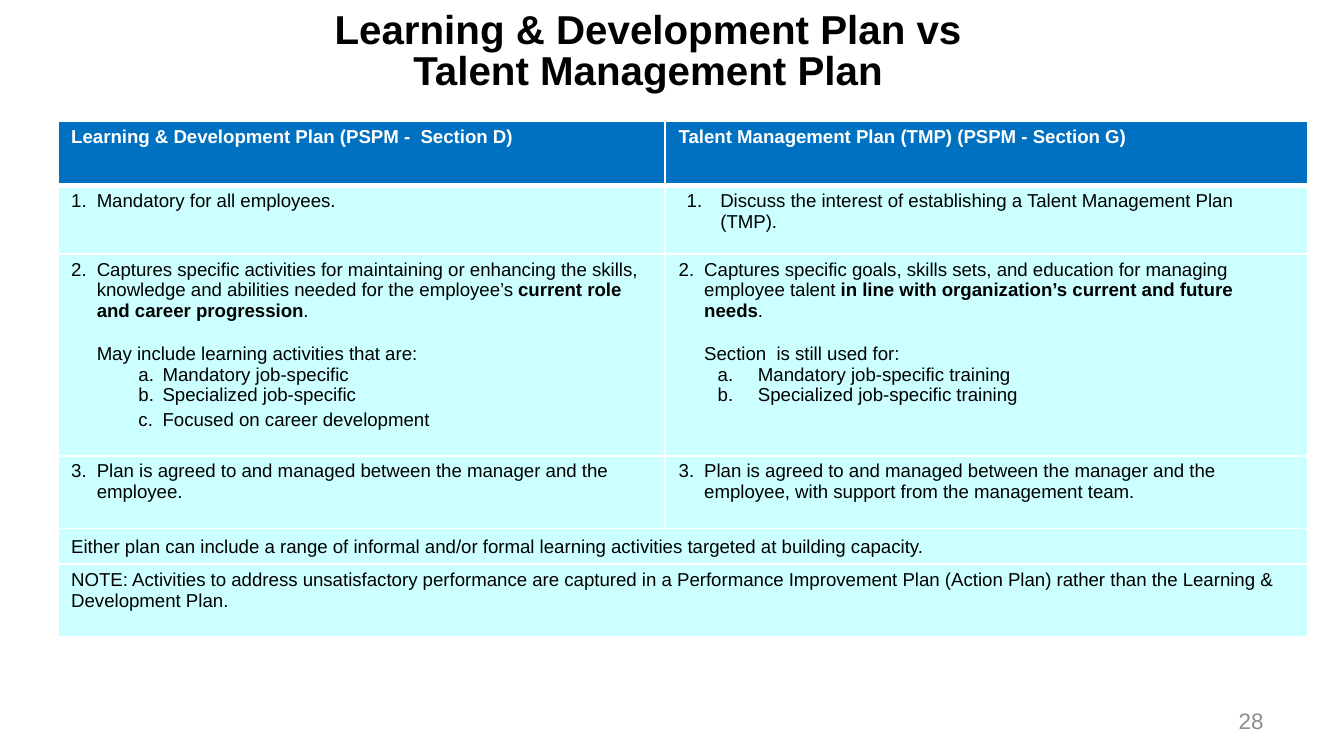
from dataclasses import dataclass

from lxml import etree
from pptx import Presentation
from pptx import util as u
from pptx.dml.color import RGBColor
from pptx.enum import text
from pptx.oxml import ns

WHITE = RGBColor(0xFF, 0xFF, 0xFF)
BLACK = RGBColor(0x00, 0x00, 0x00)
GREY = RGBColor(0x8C, 0x8C, 0x8C)
BLUE = RGBColor(0x00, 0x70, 0xC0)
AQUA = RGBColor(0xCC, 0xFF, 0xFF)

WIDTH, HEIGHT = u.Inches(10), u.Pt(405)
COLUMN_WIDTHS = (45.2, 47.8)
ROW_HEIGHTS = (8.5, 9.1, 26.7, 9.6, 4.4, 9.6)
ALPHA, DIGIT = "alphaLcPeriod", "arabicPeriod"


@dataclass(frozen=True)
class Item:
    words: str
    strong: str = ""
    tail: str = ""
    left: float = 0
    hang: float = 0
    numbering: str = ""
    start: int = 1
    level: int = 0
    before: float = 0


@dataclass(frozen=True)
class Entry:
    items: tuple[Item, ...]
    span: int = 1
    top: float = 0.04


def cols(count: float) -> int:
    return int(WIDTH * count / 100)


def rows(count: float) -> int:
    return int(HEIGHT * count / 100)


def numbered(words: str, start: int, strong: str = "", tail: str = "",
             left: float = 0.19, hang: float = 0.19) -> Item:
    return Item(words, strong, tail, left, hang, DIGIT, start)


def lettered(words: str, left: float, hang: float, before: float = 0) -> Item:
    return Item(words, left=left, hang=hang, numbering=ALPHA, level=1, before=before)


def intro(words: str) -> Item:
    return Item(words, left=0.19, before=11.5)


def single(words: str, **options) -> Entry:
    return Entry((Item(words),), **options)


HEADINGS = (
    single("Learning & Development Plan (PSPM -  Section D)"),
    single("Talent Management Plan (TMP) (PSPM - Section G)"),
)
COMPARISON = (
    (
        Entry((numbered("Mandatory for all employees.", 1),)),
        Entry((numbered("Discuss the interest of establishing a Talent Management Plan (TMP).",
                        1, left=0.31, hang=0.25),)),
    ),
    (
        Entry((
            numbered("Captures specific activities for maintaining or enhancing the skills, "
                     "knowledge and abilities needed for the employee’s ", 2,
                     "current role and career progression", "."),
            intro("May include learning activities that are:"),
            lettered("Mandatory job-specific", 0.68, 0.18),
            lettered("Specialized job-specific", 0.68, 0.18),
            lettered("Focused on career development", 0.68, 0.18, before=2),
        )),
        Entry((
            numbered("Captures specific goals, skills sets, and education for managing "
                     "employee talent ", 2,
                     "in line with organization’s current and future needs", "."),
            intro("Section  is still used for:"),
            lettered("Mandatory job-specific training", 0.59, 0.3),
            lettered("Specialized job-specific training", 0.59, 0.3),
        )),
    ),
    (
        Entry((numbered("Plan is agreed to and managed between the manager and the employee.", 3),)),
        Entry((numbered("Plan is agreed to and managed between the manager and the employee, "
                        "with support from the management team.", 3),)),
    ),
    (
        single("Either plan can include a range of informal and/or formal learning "
               "activities targeted at building capacity.", span=2, top=0.06),
    ),
    (
        single("NOTE: Activities to address unsatisfactory performance are captured in a "
               "Performance Improvement Plan (Action Plan) rather than the Learning & "
               "Development Plan.", span=2),
    ),
)


def write(paragraph, words: str, *, size: float = 10, color: RGBColor = BLACK,
          bold: bool = False) -> None:
    for position, line in enumerate(words.split("\n")):
        if position:
            paragraph.add_line_break()
        run = paragraph.add_run()
        run.text = line
        run.font.name = "Arial"
        run.font.size = u.Pt(size)
        run.font.bold = bold
        run.font.color.rgb = color


def write_item(paragraph, item: Item, color: RGBColor, bold: bool) -> None:
    paragraph.level = item.level
    if item.before:
        paragraph.space_before = u.Pt(item.before)
    settings = paragraph._p.get_or_add_pPr()
    settings.set("marL", str(u.Inches(item.left)))
    settings.set("indent", str(-u.Inches(item.hang)))
    if item.numbering:
        number = etree.SubElement(settings, ns.qn("a:buAutoNum"), type=item.numbering)
        if item.start > 1:
            number.set("startAt", str(item.start))
    write(paragraph, item.words, color=color, bold=bold)
    if item.strong:
        write(paragraph, item.strong, color=color, bold=True)
        write(paragraph, item.tail, color=color, bold=bold)


def draw_borders(cell, top: float, bottom: float) -> None:
    settings = cell._tc.get_or_add_tcPr()
    for position, (side, width) in enumerate(
            (("L", 1), ("R", 1), ("T", top), ("B", bottom))):
        border = etree.Element(ns.qn(f"a:ln{side}"), w=str(u.Pt(width)))
        paint = etree.SubElement(border, ns.qn("a:solidFill"))
        etree.SubElement(paint, ns.qn("a:srgbClr"), val=str(WHITE))
        settings.insert(position, border)


def fill_cell(cell, entry: Entry, heading: bool) -> None:
    cell.margin_left = cell.margin_right = u.Inches(0.1)
    cell.margin_top, cell.margin_bottom = u.Inches(entry.top), u.Inches(0.04)
    frame = cell.text_frame
    for position, item in enumerate(entry.items):
        paragraph = frame.add_paragraph() if position else frame.paragraphs[0]
        write_item(paragraph, item, WHITE if heading else BLACK, heading)


def draw_comparison(slide) -> None:
    table = slide.shapes.add_table(
        len(ROW_HEIGHTS), len(COLUMN_WIDTHS), cols(4.3), rows(16),
        cols(sum(COLUMN_WIDTHS)), rows(sum(ROW_HEIGHTS))).table
    table.first_row = table.horz_banding = False
    for column, width in zip(table.columns, COLUMN_WIDTHS):
        column.width = cols(width)
    for row, height in zip(table.rows, ROW_HEIGHTS):
        row.height = rows(height)
    for r, entries in enumerate((HEADINGS, *COMPARISON)):
        for cell in table.rows[r].cells:
            cell.fill.solid()
            cell.fill.fore_color.rgb = AQUA if r else BLUE
            draw_borders(cell, top=3 if r == 1 else 1, bottom=1 if r else 3)
        for c, entry in enumerate(entries):
            cell = table.cell(r, c)
            if entry.span > 1:
                cell.merge(table.cell(r, c + entry.span - 1))
            fill_cell(cell, entry, heading=r == 0)


def draw_label(slide, words: str, left: float, top: float, width: float, height: float, *,
               align, anchor, inset: float = 0, spacing: float = 1, **style) -> None:
    frame = slide.shapes.add_textbox(cols(left), rows(top), cols(width), rows(height)).text_frame
    frame.word_wrap = True
    frame.vertical_anchor = anchor
    frame.margin_left = frame.margin_right = u.Inches(inset)
    frame.margin_top = frame.margin_bottom = 0
    paragraph = frame.paragraphs[0]
    paragraph.alignment = align
    paragraph.line_spacing = spacing
    write(paragraph, words, **style)


def main() -> None:
    deck = Presentation()
    deck.slide_width, deck.slide_height = WIDTH, HEIGHT
    slide = deck.slides.add_slide(deck.slide_layouts[6])
    draw_label(slide, "Learning & Development Plan vs \nTalent Management Plan ",
               3.8, 1.6, 89.7, 12.8, align=text.PP_ALIGN.CENTER,
               anchor=text.MSO_ANCHOR.TOP, spacing=0.84, size=21.6, bold=True)
    draw_comparison(slide)
    draw_label(slide, "28", 71.7, 92.7, 23.3, 5.3, align=text.PP_ALIGN.RIGHT,
               anchor=text.MSO_ANCHOR.MIDDLE, inset=0.1, size=12, color=GREY)
    deck.save("out.pptx")


if __name__ == "__main__":
    main()
